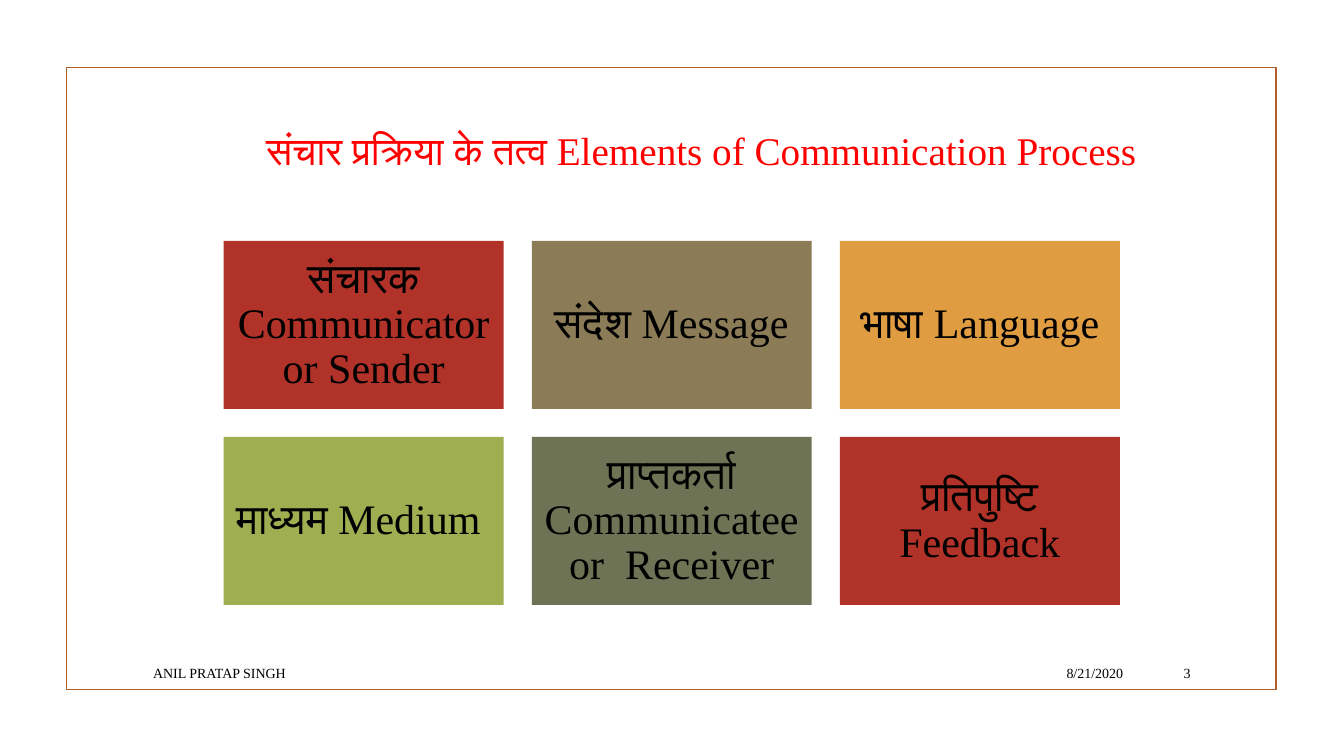
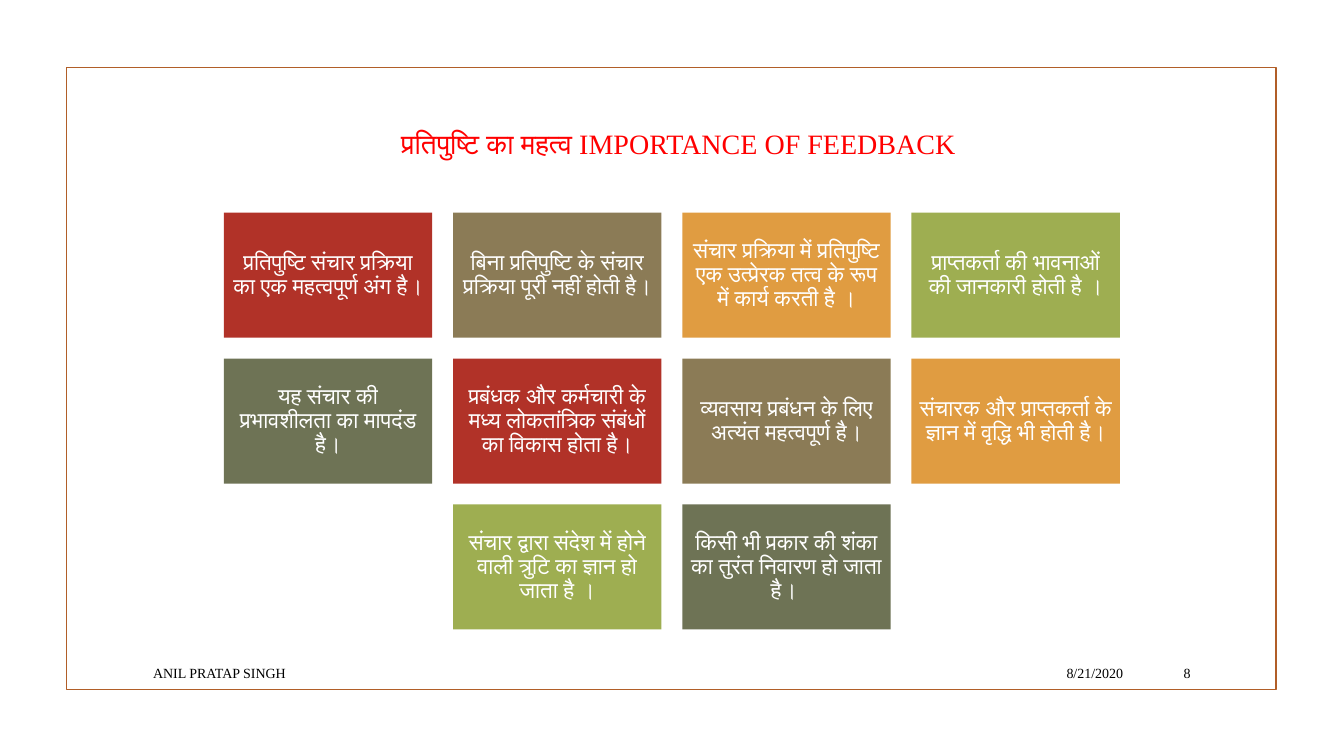
from pptx import Presentation
from pptx.dml.color import RGBColor
from pptx.enum import shapes, text
from pptx.util import Inches, Pt

FONT = "Times New Roman"
COLORS = {
    "frame": "B15E28", "title": "FF0000", "black": "000000", "white": "FFFFFF",
    "red": "B13228", "brown": "8B7B56", "orange": "E09C41",
    "green": "9EAE51", "olive": "6E7355",
}
CARD_FILLS = ["red", "brown", "orange", "green", "olive"]
LEFT, ALIGN_C, RIGHT = text.PP_ALIGN.LEFT, text.PP_ALIGN.CENTER, text.PP_ALIGN.RIGHT
MIDDLE, TOP = text.MSO_ANCHOR.MIDDLE, text.MSO_ANCHOR.TOP
GRID_LEFT, GRID_WIDTH = 2.22, 8.89

SLIDES = [
    {
        "title": "संचार प्रक्रिया के तत्व Elements of Communication Process",
        "title_at": (2.54, 1.2, 9.57, 0.57), "title_size": 28, "number": "3",
        "columns": 3, "top": 2.39, "size": 30, "color": "black", "inset": 0.12,
        "cards": [
            "संचारक Communicator or Sender",
            "संदेश Message",
            "भाषा Language",
            "माध्यम Medium ",
            "प्राप्तकर्ता Communicatee or  Receiver",
            "प्रतिपुष्टि Feedback",
        ],
    },
    {
        "title": "प्रतिपुष्टि का महत्व IMPORTANCE OF FEEDBACK",
        "title_at": (3.88, 1.2, 6.35, 0.44), "title_size": 20, "number": "8",
        "columns": 4, "top": 2.11, "size": 16, "color": "white", "inset": 0.07,
        "cards": [
            "प्रतिपुष्टि संचार प्रक्रिया का एक महत्वपूर्ण अंग है।",
            "बिना प्रतिपुष्टि के संचार प्रक्रिया पूरी नहीं होती है।",
            "संचार प्रक्रिया में प्रतिपुष्टि एक उत्प्रेरक तत्व के रूप में कार्य करती है ।",
            "प्राप्तकर्ता की भावनाओं की जानकारी होती है ।",
            "यह संचार की प्रभावशीलता का मापदंड है।",
            "प्रबंधक और कर्मचारी के मध्य लोकतांत्रिक संबंधों का विकास होता है।",
            "व्यवसाय प्रबंधन के लिए अत्यंत महत्वपूर्ण है।",
            "संचारक और प्राप्तकर्ता के ज्ञान में वृद्धि भी होती है।",
            "संचार द्वारा संदेश में होने वाली त्रुटि का ज्ञान हो जाता है ।",
            "किसी भी प्रकार की शंका का तुरंत निवारण हो जाता है। ",
        ],
    },
]


def write(sp, words, size, color="black", align=LEFT, anchor=MIDDLE,
          inset=(0.1, 0.05), spacing=1.0):
    tf = sp.text_frame
    tf.word_wrap = True
    tf.auto_size = text.MSO_AUTO_SIZE.NONE
    tf.vertical_anchor = anchor
    tf.margin_left = tf.margin_right = Inches(inset[0])
    tf.margin_top = tf.margin_bottom = Inches(inset[1])
    p = tf.paragraphs[0]
    p.alignment = align
    p.line_spacing = spacing
    r = p.add_run()
    r.text = words
    r.font.name = FONT
    r.font.size = Pt(size)
    r.font.color.rgb = RGBColor.from_string(COLORS[color])


def add_rect(s, at, fill=None, line=None):
    sp = s.shapes.add_shape(shapes.MSO_SHAPE.RECTANGLE, *map(Inches, at))
    sp.shadow.inherit = False
    if fill:
        sp.fill.solid()
        sp.fill.fore_color.rgb = RGBColor.from_string(COLORS[fill])
    else:
        sp.fill.background()
    if line:
        sp.line.color.rgb = RGBColor.from_string(COLORS[line])
        sp.line.width = Pt(1.25)
    else:
        sp.line.fill.background()
    return sp


prs = Presentation()
prs.slide_width, prs.slide_height = Inches(40 / 3), Inches(7.5)

for data in SLIDES:
    s = prs.slides.add_slide(prs.slide_layouts[5])

    # Frame
    add_rect(s, (0.66, 0.67, 12, 6.17), line="frame")

    # Title
    title = s.shapes.title
    title.left, title.top, title.width, title.height = map(Inches, data["title_at"])
    write(title, data["title"], data["title_size"], color="title", anchor=TOP)

    # Cards: gap is a tenth of the width, a short last row is centred
    cards, columns = data["cards"], data["columns"]
    width = GRID_WIDTH / (columns + 0.1 * (columns - 1))
    height, gap = 0.6 * width, 0.1 * width
    for i, words in enumerate(cards):
        row, col = divmod(i, columns)
        in_row = min(columns, len(cards) - row * columns)
        x = GRID_LEFT + (col + (columns - in_row) / 2) * (width + gap)
        y = data["top"] + row * (height + gap)
        card = add_rect(s, (x, y, width, height), fill=CARD_FILLS[i % len(CARD_FILLS)])
        write(card, words, data["size"], color=data["color"], align=ALIGN_C,
              inset=(data["inset"], data["inset"]), spacing=0.9)

    # Footer
    for words, x, w, align in [
        ("ANIL PRATAP SINGH", 1.42, 7.99, LEFT),
        ("8/21/2020", 9.49, 1.75, RIGHT),
        (data["number"], 11.32, 0.59, RIGHT),
    ]:
        box = s.shapes.add_textbox(Inches(x), Inches(6.52), Inches(w), Inches(0.31))
        write(box, words, 10, align=align)

prs.save("out.pptx")
